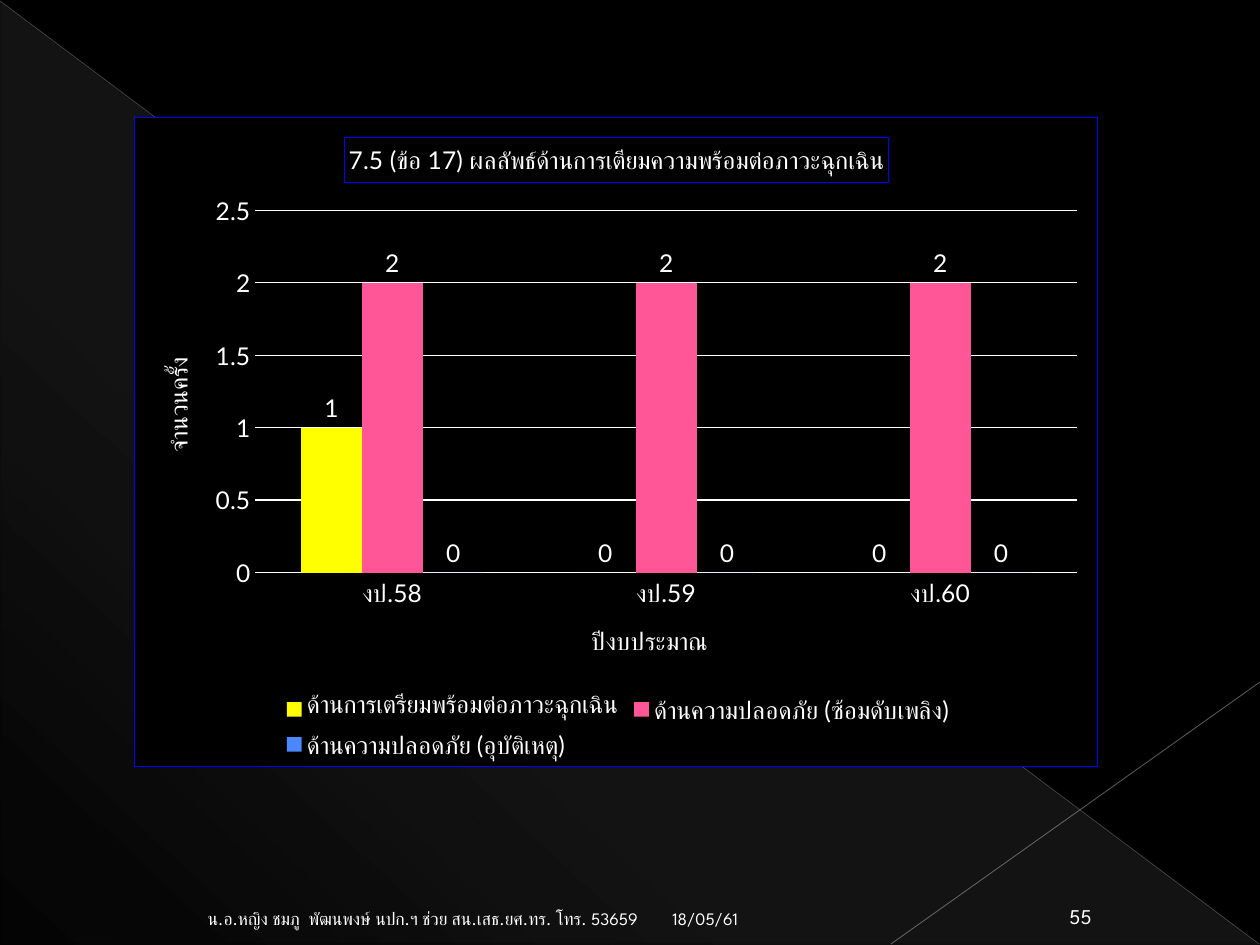
from lxml.etree import SubElement
from pptx import Presentation
from pptx.chart.data import CategoryChartData
from pptx.dml.color import RGBColor
from pptx.enum.chart import XL_CHART_TYPE, XL_LABEL_POSITION, XL_LEGEND_POSITION, XL_TICK_MARK
from pptx.enum.shapes import MSO_CONNECTOR, MSO_SHAPE
from pptx.enum.text import MSO_ANCHOR, PP_ALIGN
from pptx.oxml import parse_xml
from pptx.oxml.ns import nsdecls, qn
from pptx.util import Pt

SCALE = 914400 / 126
COLORS = {
    "black": "000000",
    "white": "FFFFFF",
    "wedge": "D2D2D2",
    "falling": "BFBFBF",
    "rising": "C6C6C6",
    "border": "0000FF",
    "yellow": "FFFF00",
    "pink": "FF5698",
    "blue": "4B87FF",
}


def px(length):
    return round(length * SCALE)


def rgb(name):
    return RGBColor.from_string(COLORS[name])


class SlideBuilder:
    text_font = "League Spartan"
    chart_font = "Lato"
    chart_size = 14

    def __init__(self, slide):
        self.slide = slide
        slide.background.fill.solid()
        slide.background.fill.fore_color.rgb = rgb("black")

    def style_font(self, font, name, size):
        font.name = name
        font.size = Pt(size)
        font.bold = False
        font.color.rgb = rgb("white")

    def wedge(self, left, top, width, height, color, stops, angle):
        shape = self.slide.shapes.add_shape(
            MSO_SHAPE.RIGHT_TRIANGLE, px(left), px(top), px(width), px(height))
        shape.shadow.inherit = False
        shape.line.fill.background()
        shape.fill.background()
        stop_xml = "".join(
            f'<a:gs pos="{position * 1000}"><a:srgbClr val="{COLORS[color]}">'
            f'<a:alpha val="{alpha * 1000}"/></a:srgbClr></a:gs>'
            for position, alpha in stops)
        gradient = parse_xml(
            f'<a:gradFill {nsdecls("a")}><a:gsLst>{stop_xml}</a:gsLst>'
            f'<a:lin ang="{angle * 60000}" scaled="0"/></a:gradFill>')
        properties = shape._element.spPr
        properties.replace(properties.find(qn("a:noFill")), gradient)

    def line(self, start, end, color, width, alpha):
        connector = self.slide.shapes.add_connector(
            MSO_CONNECTOR.STRAIGHT, *map(px, start + end))
        connector.line.color.rgb = rgb(color)
        connector.line.width = Pt(width)
        properties = connector._element.spPr
        color_element = next(properties.iter(qn("a:srgbClr")))
        SubElement(color_element, qn("a:alpha")).set("val", str(alpha * 1000))
        SubElement(properties, qn("a:effectLst"))

    def text(self, left, top, width, height, words, size, align):
        box = self.slide.shapes.add_textbox(px(left), px(top), px(width), px(height))
        frame = box.text_frame
        frame.word_wrap = True
        frame.vertical_anchor = MSO_ANCHOR.BOTTOM
        frame.text = words
        paragraph = frame.paragraphs[0]
        paragraph.alignment = align
        self.style_font(paragraph.runs[0].font, self.text_font, size)

    def place(self, element, frame, left, top, width=None, height=None, inner=False):
        for old in element.findall(qn("c:layout")):
            element.remove(old)
        values = {
            "x": (left - frame[0]) / frame[2],
            "y": (top - frame[1]) / frame[3],
        }
        if width:
            values.update(w=width / frame[2], h=height / frame[3])
        target = '<c:layoutTarget val="inner"/>' if inner else ""
        modes = "".join(f'<c:{key}Mode val="edge"/>' for key in "xy")
        sizes = "".join(f'<c:{key} val="{value:.4f}"/>' for key, value in values.items())
        layout = parse_xml(
            f'<c:layout {nsdecls("c")}><c:manualLayout>{target}{modes}{sizes}'
            '</c:manualLayout></c:layout>')
        leading = [child for child in element if child.tag in (qn("c:tx"), qn("c:legendPos"))]
        element.insert(len(leading), layout)

    def chart_title(self, owner_title, words, frame, left, top):
        text_frame = owner_title.text_frame
        text_frame.text = words
        self.style_font(text_frame.paragraphs[0].runs[0].font, self.chart_font, self.chart_size)
        self.place(owner_title._element, frame, left, top)

    def border(self, chart_format):
        chart_format.fill.solid()
        chart_format.fill.fore_color.rgb = rgb("black")
        chart_format.line.color.rgb = rgb("border")
        chart_format.line.width = Pt(0.75)

    def axis(self, axis, words, frame, left, top):
        axis.major_tick_mark = XL_TICK_MARK.NONE
        axis.minor_tick_mark = XL_TICK_MARK.NONE
        axis.format.line.fill.background()
        self.style_font(axis.tick_labels.font, self.chart_font, self.chart_size)
        self.chart_title(axis.axis_title, words, frame, left, top)

    def column_chart(self, frame, categories, series_rows):
        data = CategoryChartData()
        data.categories = categories
        for name, values, _ in series_rows:
            data.add_series(name, values)
        chart = self.slide.shapes.add_chart(
            XL_CHART_TYPE.COLUMN_CLUSTERED, *map(px, frame), data).chart
        self.style_font(chart.font, self.chart_font, self.chart_size)

        area = parse_xml(
            f'<c:spPr {nsdecls("c", "a")}><a:solidFill><a:srgbClr val="{COLORS["black"]}"/>'
            f'</a:solidFill><a:ln w="{Pt(0.75)}"><a:solidFill>'
            f'<a:srgbClr val="{COLORS["border"]}"/></a:solidFill></a:ln></c:spPr>')
        chart._chartSpace.chart.addnext(area)

        chart.has_title = True
        self.chart_title(
            chart.chart_title, "7.5 (ข้อ 17) ผลลัพธ์ด้านการเตียมความพร้อมต่อภาวะฉุกเฉิน",
            frame, 344, 137)
        self.border(chart.chart_title.format)
        self.axis(chart.category_axis, "ปีงบประมาณ", frame, 587, 624)
        value_axis = chart.value_axis
        self.axis(value_axis, "จำนวนครั้ง", frame, 160, 352)
        value_axis.axis_title.text_frame._txBody.bodyPr.set("rot", "-5400000")
        value_axis.minimum_scale = 0
        value_axis.maximum_scale = 2.5
        value_axis.major_unit = 0.5
        value_axis.major_gridlines.format.line.color.rgb = rgb("white")
        value_axis.major_gridlines.format.line.width = Pt(0.75)

        chart.has_legend = True
        chart.legend.position = XL_LEGEND_POSITION.BOTTOM
        chart.legend.include_in_layout = False
        self.style_font(chart.legend.font, self.chart_font, self.chart_size)
        self.place(chart.legend._element, frame, 278, 690, 680, 75)

        plot = chart.plots[0]
        plot.gap_width = 150
        plot.vary_by_categories = False
        for series, (_, _, color) in zip(plot.series, series_rows):
            series.format.fill.solid()
            series.format.fill.fore_color.rgb = rgb(color)
            labels = series.data_labels
            labels.show_value = True
            labels.position = XL_LABEL_POSITION.OUTSIDE_END
            self.style_font(labels.font, self.chart_font, self.chart_size)
        plot_area = chart._chartSpace.chart.plotArea
        self.place(plot_area, frame, 255, 210, 823, 363, inner=True)


def main():
    presentation = Presentation()
    presentation.slide_width = px(1260)
    presentation.slide_height = px(945)
    builder = SlideBuilder(presentation.slides.add_slide(presentation.slide_layouts[6]))

    builder.wedge(1, 2, 1258, 942, "wedge", [(0, 10), (70, 8), (100, 1)], 133)
    builder.line((0, 1), (1259, 944), "falling", 0.39, 35)
    builder.line((1260, 682), (891, 944), "rising", 0.47, 45)
    builder.text(660, 893, 294, 42, "18/05/61", 10, PP_ALIGN.LEFT)
    builder.text(
        63, 893, 587, 42, "น.อ.หญิง ชมภู  พัฒนพงษ์ นปก.ฯ ช่วย สน.เสธ.ยศ.ทร. โทร. 53659",
        10, PP_ALIGN.RIGHT)
    builder.text(1046, 893, 69, 42, "55", 12, PP_ALIGN.CENTER)
    builder.column_chart(
        (134, 117, 964, 650),
        ["งป.58", "งป.59", "งป.60"],
        [
            ("ด้านการเตรียมพร้อมต่อภาวะฉุกเฉิน", (1, 0, 0), "yellow"),
            ("ด้านความปลอดภัย (ซ้อมดับเพลิง)", (2, 2, 2), "pink"),
            ("ด้านความปลอดภัย (อุบัติเหตุ)", (0, 0, 0), "blue"),
        ])
    presentation.save("out.pptx")


if __name__ == "__main__":
    main()
